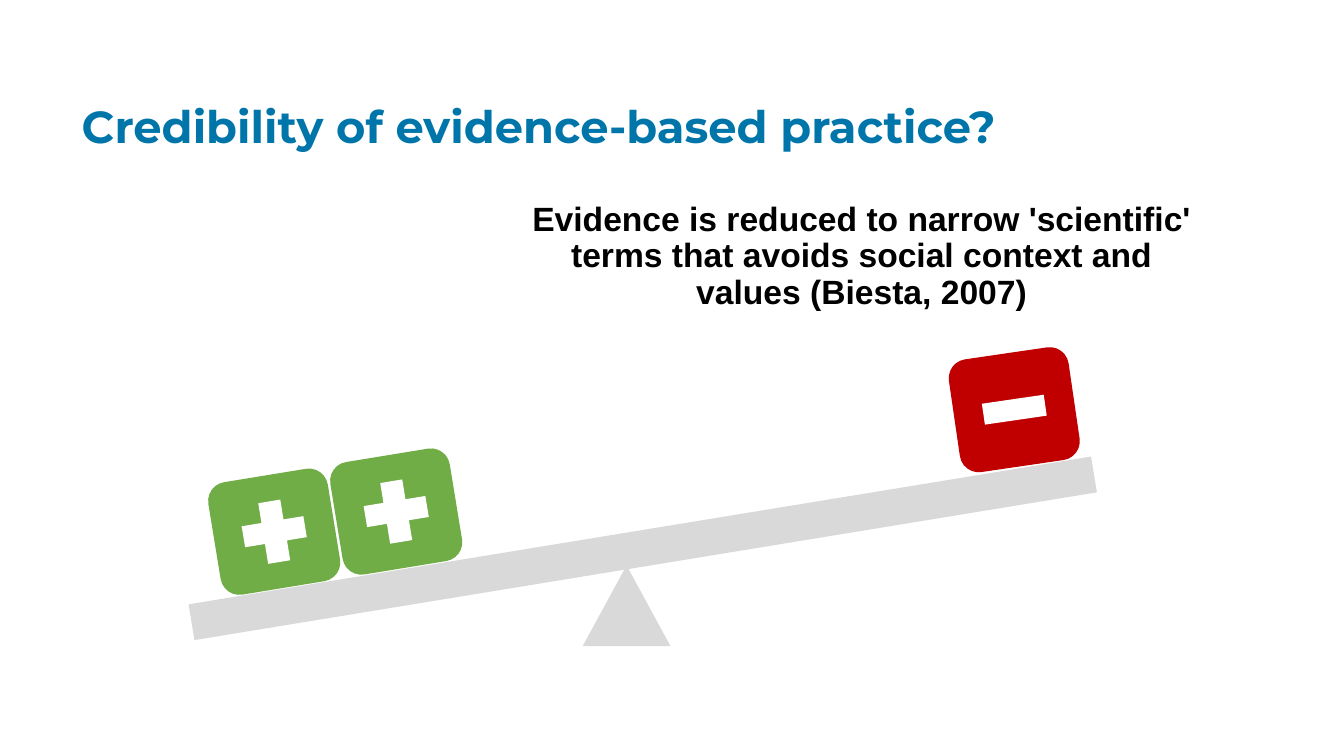
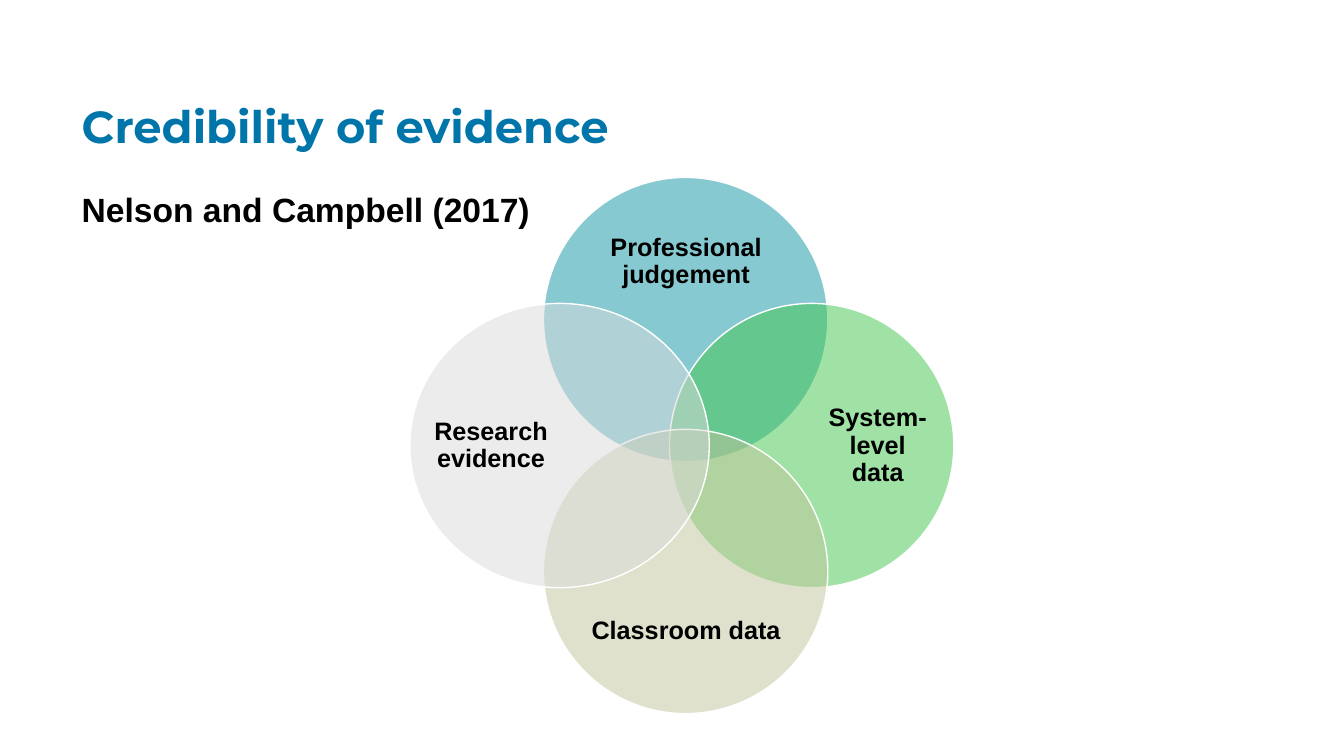
"""Build two slides on the credibility of evidence."""
from lxml import etree
from pptx import Presentation
from pptx.dml.color import RGBColor
from pptx.enum import shapes, text
from pptx.oxml import ns
from pptx.util import Inches, Pt

COLORS = {
    "title": "0075AA", "text": "000000", "white": "FFFFFF",
    "beam": "D9D9D9", "plus": "70AD47", "minus": "C00000",
    "judgement": "1194A4", "system": "43C74D",
    "classroom": "C3C59A", "research": "DADADA",
}
SHAPE = shapes.MSO_SHAPE
ALIGN = text.PP_ALIGN
ANCHOR = text.MSO_ANCHOR
TITLE_AT = (0.71, 0.99, 11.5, 0.69)
TILT = 350.7
TILE = (1.2, 1.13)
VENN_X, VENN_Y, VENN_STEP, VENN_SIZE = 6.8, 4.42, 1.25, 2.82


def rgb(name):
    return RGBColor.from_string(COLORS[name])


def place(sp, at):
    sp.left, sp.top, sp.width, sp.height = map(Inches, at)


def centred(x, y, w, h):
    return x - w / 2, y - h / 2, w, h


def write(sp, words, size=24, font="Arial", color="text", align=ALIGN.LEFT,
          anchor=ANCHOR.TOP, inset=(0.1, 0.05)):
    tf = sp.text_frame
    tf.word_wrap = True
    tf.auto_size = text.MSO_AUTO_SIZE.NONE
    tf.vertical_anchor = anchor
    tf.margin_left = tf.margin_right = Inches(inset[0])
    tf.margin_top = tf.margin_bottom = Inches(inset[1])
    p = tf.paragraphs[0]
    p.alignment = align
    p.line_spacing = 0.9
    p.space_before = Pt(0)
    r = p.add_run()
    r.text = words
    r.font.size, r.font.name, r.font.bold = Pt(size), font, True
    r.font.color.rgb = rgb(color)
    return p


def add_slide(prs, title, body, body_at, align=ALIGN.LEFT):
    s = prs.slides.add_slide(prs.slide_layouts[1])
    place(s.shapes.title, TITLE_AT)
    write(s.shapes.title, title, size=32, font="Montserrat", color="title")
    sp = s.placeholders[1]
    place(sp, body_at)
    pPr = write(sp, body, align=align)._p.get_or_add_pPr()
    pPr.set("marL", "0")
    pPr.set("indent", "0")
    etree.SubElement(pPr, ns.qn("a:buNone"))
    return s


def add_shape(parent, kind, at, fill, rotation=0):
    sp = parent.shapes.add_shape(kind, *map(Inches, at))
    sp.shadow.inherit = False
    sp.fill.solid()
    sp.fill.fore_color.rgb = rgb(fill)
    sp.line.fill.background()
    sp.rotation = rotation
    return sp


def add_tile(s, x, y, fill, sign, sign_size, rotation):
    group = s.shapes.add_group_shape()
    tile_w, tile_h = TILE
    add_shape(group, SHAPE.ROUNDED_RECTANGLE, (x, y, *TILE), fill)
    sp = add_shape(group, sign,
                   centred(x + tile_w / 2, y + tile_h / 2, *sign_size), "white")
    if sign == SHAPE.CROSS:
        sp.adjustments[0] = 0.327
    group.rotation = rotation


def add_circle(group, at, fill):
    sp = add_shape(group, SHAPE.OVAL, at, fill)
    color = sp.fill._xPr.find(".//" + ns.qn("a:srgbClr"))
    etree.SubElement(color, ns.qn("a:alpha"), val="50000")
    sp.line.color.rgb = rgb("white")
    sp.line.width = Pt(1)


def add_label(group, words, at):
    sp = group.shapes.add_textbox(*map(Inches, at))
    write(sp, words, size=18, align=ALIGN.CENTER, anchor=ANCHOR.MIDDLE,
          inset=(0, 0))


def build_balance(prs):
    s = add_slide(
        prs, "Credibility of evidence-based practice?",
        "Evidence is reduced to narrow 'scientific' terms that avoids social "
        "context and values (Biesta, 2007)",
        (5.11, 1.96, 6.87, 1.3), ALIGN.CENTER)
    add_shape(s, SHAPE.ISOSCELES_TRIANGLE, (5.78, 5.61, 0.87, 0.8), "beam")
    add_shape(s, SHAPE.RECTANGLE, (1.84, 5.26, 9.07, 0.36), "beam", TILT)
    for x, y in ((2.12, 4.71), (3.33, 4.51)):
        add_tile(s, x, y, "plus", SHAPE.CROSS, (0.62, 0.61), TILT)
    add_tile(s, 9.46, 3.5, "minus", SHAPE.RECTANGLE, (0.62, 0.21), TILT + 1)


def build_venn(prs):
    s = add_slide(prs, "Credibility of evidence", "Nelson and Campbell (2017)",
                  (0.71, 1.87, 10.79, 3.8))
    group = s.shapes.add_group_shape()
    circles = (
        ("Professional judgement", "judgement", 0, -1, VENN_SIZE,
         (5.72, 2.15, 2.17, 0.9)),
        ("System-level data", "system", 1, 0, VENN_SIZE,
         (8.16, 3.34, 1.09, 2.17)),
        ("Classroom data", "classroom", 0, 1, VENN_SIZE,
         (5.72, 5.81, 2.17, 0.9)),
        ("Research evidence", "research", -1, 0, 2.97,
         (4.3, 3.34, 1.14, 2.17)),
    )
    for words, fill, dx, dy, width, label_at in circles:
        add_circle(group, centred(VENN_X + dx * VENN_STEP,
                                  VENN_Y + dy * VENN_STEP,
                                  width, VENN_SIZE), fill)
        add_label(group, words, label_at)


def main():
    prs = Presentation()
    prs.slide_width, prs.slide_height = Inches(13.33), Inches(7.5)
    build_balance(prs)
    build_venn(prs)
    prs.save("out.pptx")


if __name__ == "__main__":
    main()
